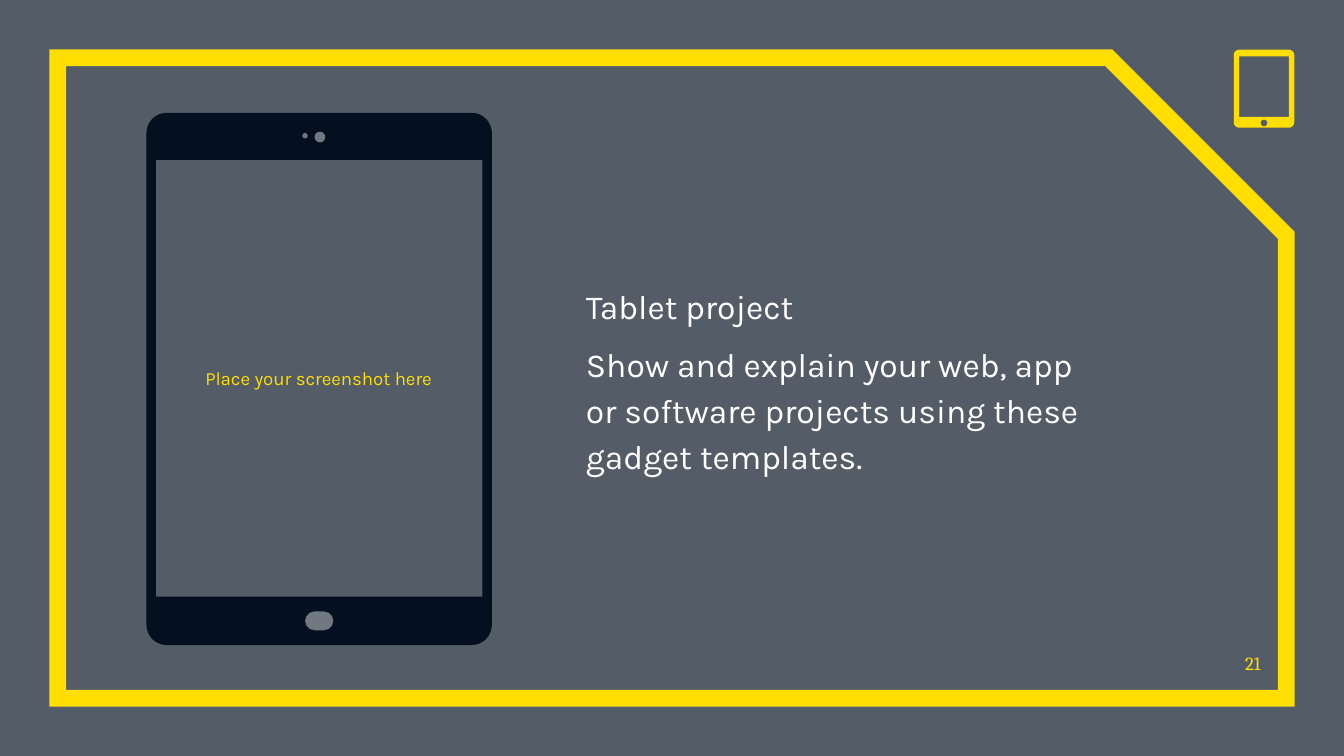
import math

import pptx
import pptx.dml.color
import pptx.enum.shapes
import pptx.enum.text
import pptx.oxml
import pptx.oxml.ns
import pptx.util
from lxml import etree

WIDTH, HEIGHT = 10, 5.625
COLORS = {"navy": "040F20", "yellow": "FFDE00", "gray": "717881", "white": "FFFFFF"}
SHAPES = pptx.enum.shapes.MSO_SHAPE
ALIGN = pptx.enum.text.PP_ALIGN
ANCHOR = pptx.enum.text.MSO_ANCHOR
inches = pptx.util.Inches


def color(name):
    return pptx.dml.color.RGBColor.from_string(COLORS[name])


def add_element(parent, tag, **attributes):
    return etree.SubElement(parent, pptx.oxml.ns.qn(tag), attributes)


def paint(shape, name):
    shape.shadow.inherit = False
    shape.fill.solid()
    shape.fill.fore_color.rgb = color(name)
    shape.line.fill.background()


def add_preset(shapes, kind, box, fill):
    shape = shapes.add_shape(kind, *map(inches, box))
    paint(shape, fill)
    return shape


def rounded_outline(left, top, width, height, radius=0):
    """Points, in EMU, of a rectangle whose corners are arcs of the given radius."""
    right, bottom = left + width - radius, top + height - radius
    left, top = left + radius, top + radius
    corners = [(right, bottom), (left, bottom), (left, top), (right, top)]
    steps = 8 if radius else 0
    points = []
    for quarter, (x, y) in enumerate(corners):
        for step in range(steps + 1):
            angle = math.pi / 2 * (quarter + step / max(steps, 1))
            points.append((inches(x + radius * math.cos(angle)),
                           inches(y + radius * math.sin(angle))))
    return points


def add_cutout(shapes, outer, holes, fill):
    """Rounded body with holes, which run the other way round."""
    body = rounded_outline(*outer)
    builder = shapes.build_freeform(*body[0])
    builder.add_line_segments(body[1:])
    for hole in holes:
        points = rounded_outline(*hole)[::-1]
        builder.move_to(*points[0])
        builder.add_line_segments(points[1:])
    paint(builder.convert_to_shape(), fill)


def set_frame(shape, anchor, inset=0):
    frame = shape.text_frame
    frame.word_wrap = True
    frame.auto_size = pptx.enum.text.MSO_AUTO_SIZE.NONE
    frame.vertical_anchor = anchor
    frame.margin_left = frame.margin_right = inches(inset)
    frame.margin_top = frame.margin_bottom = inches(inset)
    return frame


def add_run(paragraph, text, font, size, name):
    run = paragraph.add_run()
    run.text = text
    run.font.name = font
    run.font.size = pptx.util.Pt(size)
    run.font.color.rgb = color(name)


def add_label(slide, box, text, font, align, anchor, inset=0):
    label = slide.shapes.add_textbox(*map(inches, box))
    paragraph = set_frame(label, anchor, inset).paragraphs[0]
    paragraph.alignment = align
    add_run(paragraph, text, font, 10, "yellow")


def add_backdrop(slide):
    # Translucent navy over the white background
    veil = add_preset(slide.shapes, SHAPES.RECTANGLE, (0, 0, WIDTH, HEIGHT), "navy")
    add_element(veil.fill._xPr.find(".//" + pptx.oxml.ns.qn("a:srgbClr")),
                "a:alpha", val="68000")
    # Frame with one cut corner
    margin = 0.43
    box = (margin, margin, WIDTH - 2 * margin, HEIGHT - 2 * margin)
    border = add_preset(slide.shapes, SHAPES.SNIP_1_RECTANGLE, box, "navy")
    border.adjustments[0] = 0.277
    border.fill.background()
    border.line.color.rgb = color("yellow")
    border.line.width = pptx.util.Pt(9)
    add_element(border.line._get_or_add_ln(), "a:miter", lim="800000")


def add_tablet(slide):
    shapes = slide.shapes.add_group_shape().shapes
    add_cutout(shapes, (1.09, 0.84, 2.57, 3.96, 0.15), [(1.16, 1.19, 2.43, 3.25)], "navy")
    home = add_preset(shapes, SHAPES.ROUNDED_RECTANGLE, (2.27, 4.55, 0.21, 0.14), "gray")
    home.adjustments[0] = 0.5
    for left, top, size in ((2.25, 0.99, 0.04), (2.34, 0.98, 0.08)):
        add_preset(shapes, SHAPES.OVAL, (left, top, size, size), "gray")


def fill_body(body, texts):
    body.left, body.top, body.width, body.height = map(inches, (4.36, 1.66, 3.8, 2.31))
    frame = set_frame(body, ANCHOR.MIDDLE)
    for index, text in enumerate(texts):
        paragraph = frame.add_paragraph() if index else frame.paragraphs[0]
        paragraph.line_spacing = 1.15
        paragraph.space_before = pptx.util.Pt(6 if index else 0)
        properties = paragraph._p.get_or_add_pPr()
        properties.set("marL", "0")
        properties.set("indent", "0")
        add_element(properties, "a:buNone")
        add_run(paragraph, text, "Karla", 18, "white")


def main():
    presentation = pptx.Presentation()
    presentation.slide_width = inches(WIDTH)
    presentation.slide_height = inches(HEIGHT)
    slide = presentation.slides.add_slide(presentation.slide_layouts[1])
    title, body = slide.placeholders
    title.element.getparent().remove(title.element)

    add_backdrop(slide)

    # Tablet with its screen label, and the page number
    add_label(slide, (1.15, 1.2, 2.44, 3.23), "Place your screenshot here", "Karla",
              ALIGN.CENTER, ANCHOR.MIDDLE, inset=0.1)
    add_label(slide, (9.11, 4.74, 0.27, 0.28), "21", "Cambria", ALIGN.RIGHT, ANCHOR.BOTTOM)
    add_tablet(slide)

    # Corner icon
    add_cutout(slide.shapes, (9.18, 0.37, 0.45, 0.58, 0.04),
               [(9.22, 0.42, 0.37, 0.45), (9.38, 0.89, 0.05, 0.05, 0.025)], "yellow")

    # Body text, brought in front of the backdrop
    slide.shapes._spTree.append(body.element)
    fill_body(body, ["Tablet project",
                     "Show and explain your web, app or software projects "
                     "using these gadget templates."])

    presentation.save("out.pptx")


if __name__ == "__main__":
    main()
